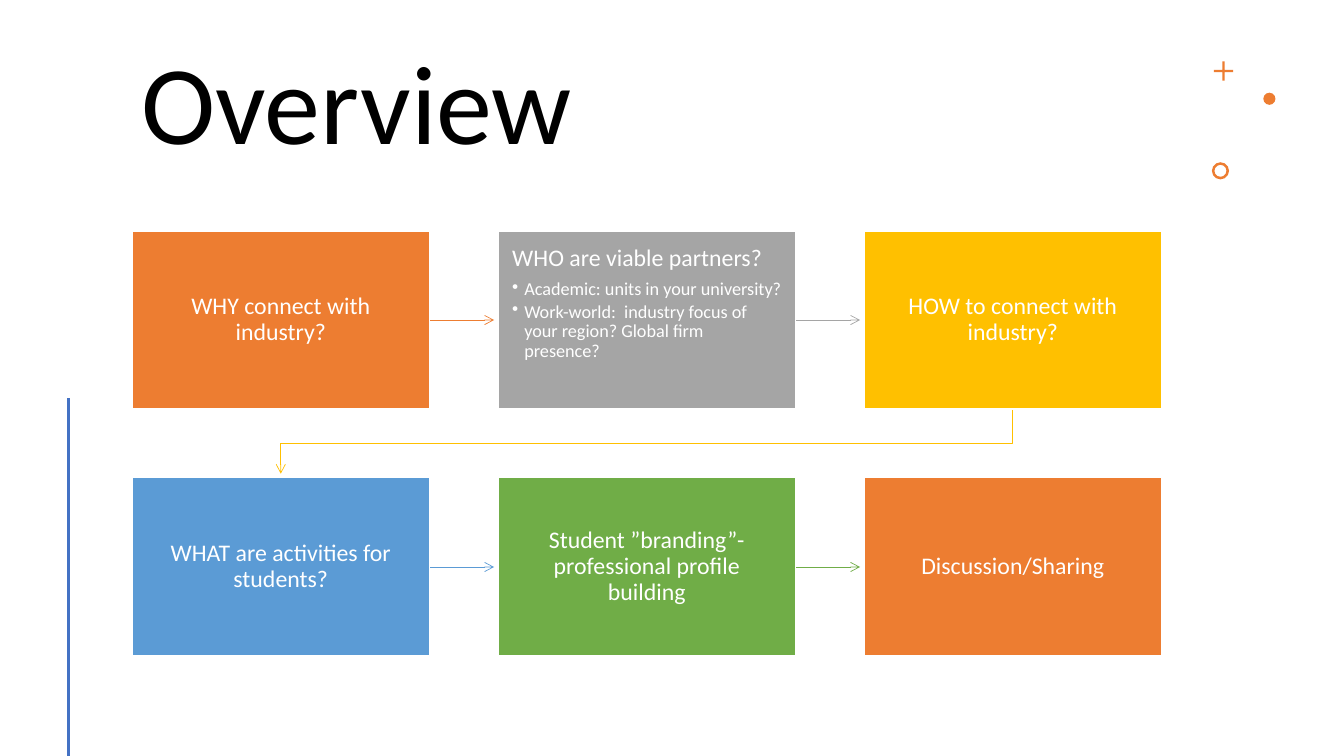
from lxml.etree import SubElement
from pptx import Presentation
from pptx.dml.color import RGBColor
from pptx.enum.shapes import MSO_CONNECTOR, MSO_SHAPE
from pptx.enum.text import MSO_ANCHOR, MSO_AUTO_SIZE, PP_ALIGN
from pptx.oxml.ns import qn
from pptx.util import Inches, Pt

FONT = "Calibri"
BLACK = RGBColor(0x00, 0x00, 0x00)
WHITE = RGBColor(0xFF, 0xFF, 0xFF)
ORANGE = RGBColor(0xED, 0x7D, 0x31)
GRAY = RGBColor(0xA5, 0xA5, 0xA5)
GOLD = RGBColor(0xFF, 0xC0, 0x00)
SKY = RGBColor(0x5B, 0x9B, 0xD5)
GREEN = RGBColor(0x70, 0xAD, 0x47)
BLUE = RGBColor(0x44, 0x72, 0xC4)

COLUMNS = 3
CARD_WIDTH, CARD_HEIGHT = 2.95, 1.77
ARROW_CLEARANCE = 0.04

# Heading, bullet points, color
STEPS = [
    ("WHY connect with industry?", [], ORANGE),
    ("WHO are viable partners?",
     ["Academic: units in your university?",
      "Work-world:  industry focus of your region? Global firm presence?"], GRAY),
    ("HOW to connect with industry?", [], GOLD),
    ("WHAT are activities for students?", [], SKY),
    ("Student ”branding”-professional profile building", [], GREEN),
    ("Discussion/Sharing", [], ORANGE),
]


def format_paragraph(paragraph, size, color, space_after=0):
    paragraph.line_spacing = 0.9
    paragraph.space_before = Pt(0)
    paragraph.space_after = Pt(space_after)
    for run in paragraph.runs:
        run.font.name = FONT
        run.font.size = Pt(size)
        run.font.color.rgb = color


def add_bullet(paragraph):
    properties = paragraph._p.get_or_add_pPr()
    properties.set("marL", str(Inches(0.12)))
    properties.set("indent", str(-Inches(0.12)))
    SubElement(properties, qn("a:buChar")).set("char", "•")


def add_arrowhead(line):
    SubElement(line._get_or_add_ln(), qn("a:tailEnd")).set("type", "arrow")


def add_line(slide, start, end, color, width):
    line = slide.shapes.add_connector(
        MSO_CONNECTOR.STRAIGHT, *(Inches(value) for value in start + end))
    line.line.color.rgb = color
    line.line.width = Pt(width)
    SubElement(line._element.spPr, qn("a:effectLst"))
    return line


def add_title(slide, left, top, width, height):
    title = slide.shapes.title
    title.left, title.top = Inches(left), Inches(top)
    title.width, title.height = Inches(width), Inches(height)
    frame = title.text_frame
    frame.text = "Overview"
    frame.auto_size = MSO_AUTO_SIZE.NONE
    frame.vertical_anchor = MSO_ANCHOR.MIDDLE
    frame.paragraphs[0].alignment = PP_ALIGN.LEFT
    format_paragraph(frame.paragraphs[0], 80, BLACK)


def add_ornaments(slide, left, top):
    # Plus, dot and ring: preset, offset, size, adjustment
    for preset, dx, dy, size, adjustment in [
        (MSO_SHAPE.CROSS, 0.02, 0, 0.19, 0.44),
        (MSO_SHAPE.OVAL, 0.51, 0.31, 0.12, None),
        (MSO_SHAPE.DONUT, 0, 1, 0.17, 0.15),
    ]:
        ornament = slide.shapes.add_shape(
            preset, Inches(left + dx), Inches(top + dy), Inches(size), Inches(size))
        if adjustment is not None:
            ornament.adjustments[0] = adjustment
        ornament.shadow.inherit = False
        ornament.fill.solid()
        ornament.fill.fore_color.rgb = ORANGE
        ornament.line.fill.background()


def add_card(slide, left, top, heading, points, color):
    card = slide.shapes.add_shape(
        MSO_SHAPE.RECTANGLE, Inches(left), Inches(top),
        Inches(CARD_WIDTH), Inches(CARD_HEIGHT))
    card.shadow.inherit = False
    card.fill.solid()
    card.fill.fore_color.rgb = color
    card.line.color.rgb = WHITE
    card.line.width = Pt(1)

    frame = card.text_frame
    frame.word_wrap = True
    frame.margin_left = frame.margin_right = Inches(0.14)
    frame.margin_top = frame.margin_bottom = Inches(0.15)
    frame.vertical_anchor = MSO_ANCHOR.TOP if points else MSO_ANCHOR.MIDDLE
    frame.text = heading
    frame.paragraphs[0].alignment = PP_ALIGN.LEFT if points else PP_ALIGN.CENTER
    format_paragraph(frame.paragraphs[0], 17, WHITE, 6)
    for point in points:
        paragraph = frame.add_paragraph()
        paragraph.text = point
        paragraph.level = 1
        paragraph.alignment = PP_ALIGN.LEFT
        format_paragraph(paragraph, 13, WHITE, 2)
        add_bullet(paragraph)


def add_return_arrow(slide, start, end, color):
    """Lead from the end of one row down to the start of the next."""
    (start_x, start_y), (end_x, end_y) = start, end
    middle_y = (start_y + end_y + ARROW_CLEARANCE) / 2
    corners = [(start_x, middle_y), (end_x, middle_y), end]
    builder = slide.shapes.build_freeform(Inches(start_x), Inches(start_y))
    builder.add_line_segments(
        [(Inches(x), Inches(y)) for x, y in corners], close=False)
    arrow = builder.convert_to_shape()
    arrow.shadow.inherit = False
    arrow.fill.background()
    arrow.line.color.rgb = color
    arrow.line.width = Pt(0.5)
    add_arrowhead(arrow.line)


def add_process(slide, left, top, width, height):
    column_step = (width - CARD_WIDTH) / (COLUMNS - 1)
    row_step = height - CARD_HEIGHT
    for index, (heading, points, color) in enumerate(STEPS):
        row, column = divmod(index, COLUMNS)
        x, y = left + column * column_step, top + row * row_step
        right, bottom = x + CARD_WIDTH, y + CARD_HEIGHT
        if column < COLUMNS - 1:
            middle = y + CARD_HEIGHT / 2
            arrow = add_line(slide, (right, middle),
                             (x + column_step - ARROW_CLEARANCE, middle), color, 0.5)
            add_arrowhead(arrow.line)
        elif index < len(STEPS) - 1:
            add_return_arrow(slide, (x + CARD_WIDTH / 2, bottom),
                             (left + CARD_WIDTH / 2, y + row_step - ARROW_CLEARANCE),
                             color)
        add_card(slide, x, y, heading, points, color)


def main():
    presentation = Presentation()
    presentation.slide_width = Inches(13.33)
    presentation.slide_height = Inches(7.5)
    slide = presentation.slides.add_slide(presentation.slide_layouts[5])
    add_title(slide, 1.3, 0.42, 10.23, 1.31)
    add_ornaments(slide, 12.02, 0.61)
    # Accent line at the left edge
    add_line(slide, (0.68, 3.95), (0.68, 7.5), BLUE, 2)
    add_process(slide, 1.31, 2.29, 10.21, 4.22)
    presentation.save("out.pptx")


if __name__ == "__main__":
    main()
